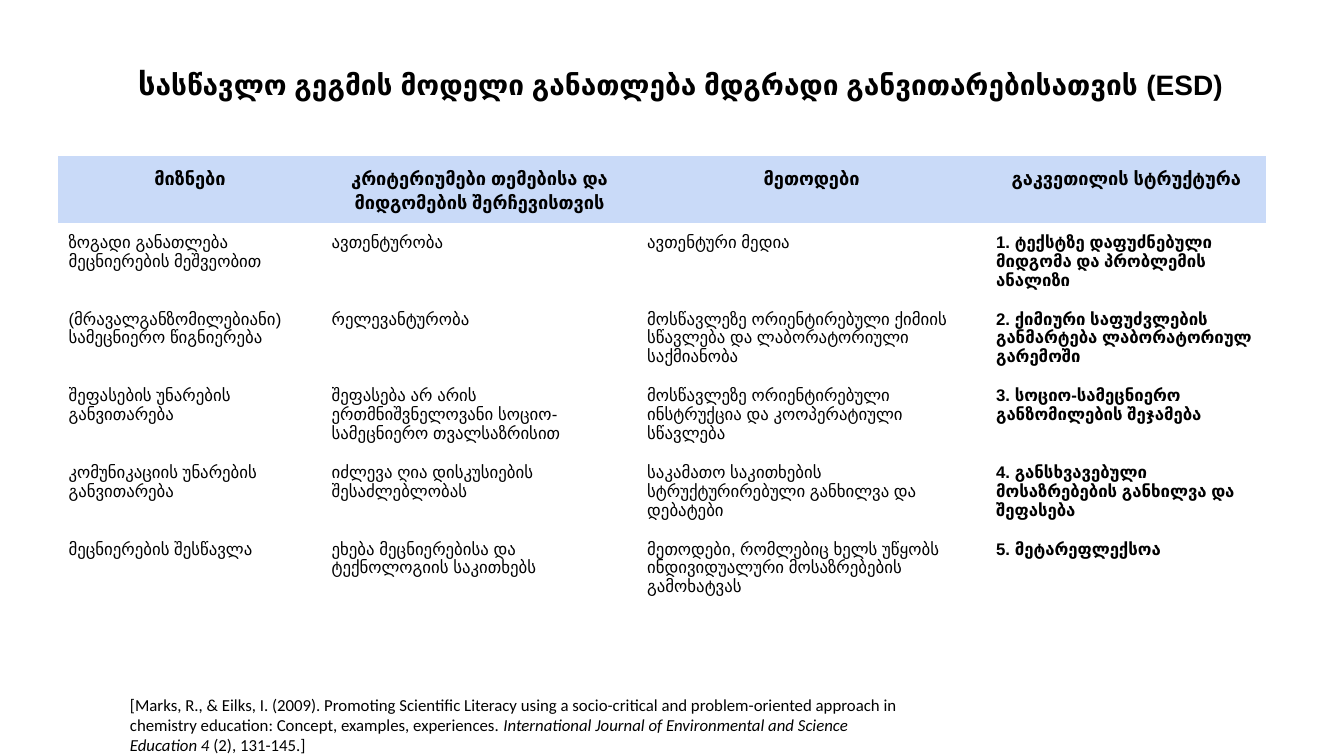
from dataclasses import dataclass
from typing import Any

import pptx
import pptx.dml.color
import pptx.enum.text
import pptx.util

SLIDE_WIDTH = pptx.util.Inches(13.33)
SLIDE_HEIGHT = pptx.util.Inches(7.5)
COLORS = {"text": "000000", "header": "C9DAF8"}
PLAIN_TABLE_STYLE = "{2D5ABB26-0587-4C30-8999-92F81FD0307C}"
LEFT = pptx.enum.text.PP_ALIGN.LEFT
CENTER = pptx.enum.text.PP_ALIGN.CENTER
TOP = pptx.enum.text.MSO_ANCHOR.TOP
MIDDLE = pptx.enum.text.MSO_ANCHOR.MIDDLE


def across(percent: float) -> int:
    return round(SLIDE_WIDTH * percent / 100)


def down(percent: float) -> int:
    return round(SLIDE_HEIGHT * percent / 100)


@dataclass(frozen=True)
class Area:
    left: float
    top: float
    width: float
    height: float

    def lengths(self) -> dict[str, int]:
        return {
            "left": across(self.left),
            "top": down(self.top),
            "width": across(self.width),
            "height": down(self.height),
        }


@dataclass(frozen=True)
class Run:
    text: str
    size: float
    font: str = "Arial"
    bold: bool = False
    italic: bool = False


@dataclass(frozen=True)
class Column:
    width: float
    heading: str
    entries: tuple[str, ...]
    bold: bool = False


TITLE_AREA = Area(9.53, 1.33, 86.27, 19.33)
CITATION_AREA = Area(8.93, 91.2, 59.94, 9.33)
TABLE_LEFT, TABLE_TOP = 4.35, 20.67
HEADER_HEIGHT, ROW_HEIGHT = 6.93, 10

TITLE = [
    Run("ს", 22, bold=True),
    Run("ასწავლო გეგმის მოდელი განათლება მდგრადი განვითარებისათვის (ESD)", 20, bold=True),
]
CITATION = [
    Run(
        "[Marks, R., & Eilks, I. (2009). Promoting Scientific Literacy using a socio-critical and "
        "problem-oriented approach in chemistry education: Concept, examples, experiences. ",
        12,
        "Calibri",
    ),
    Run("International Journal of Environmental and Science Education 4 ", 12, "Calibri", italic=True),
    Run("(2), 131-145.]", 12, "Calibri"),
]
COLUMNS = [
    Column(19.58, "მიზნები", (
        "ზოგადი განათლება მეცნიერების მეშვეობით",
        "(მრავალგანზომილებიანი) სამეცნიერო წიგნიერება",
        "შეფასების უნარების განვითარება",
        "კომუნიკაციის უნარების განვითარება",
        "მეცნიერების შესწავლა",
    )),
    Column(23.48, "კრიტერიუმები თემებისა და მიდგომების შერჩევისთვის", (
        "ავთენტურობა",
        "რელევანტურობა",
        "შეფასება არ არის ერთმნიშვნელოვანი სოციო-სამეცნიერო თვალსაზრისით",
        "იძლევა ღია დისკუსიების შესაძლებლობას",
        "ეხება მეცნიერებისა და ტექნოლოგიის საკითხებს",
    )),
    Column(25.96, "მეთოდები", (
        "ავთენტური მედია",
        "მოსწავლეზე ორიენტირებული ქიმიის სწავლება და ლაბორატორიული საქმიანობა",
        "მოსწავლეზე ორიენტირებული ინსტრუქცია და კოოპერატიული სწავლება",
        "საკამათო საკითხების სტრუქტურირებული განხილვა და დებატები",
        "მეთოდები, რომლებიც ხელს უწყობს ინდივიდუალური მოსაზრებების გამოხატვას",
    )),
    Column(20.86, "გაკვეთილის სტრუქტურა", (
        "1. ტექსტზე დაფუძნებული მიდგომა და პრობლემის ანალიზი",
        "2. ქიმიური საფუძვლების განმარტება ლაბორატორიულ გარემოში",
        "3. სოციო-სამეცნიერო განზომილების შეჯამება",
        "4. განსხვავებული მოსაზრებების განხილვა და შეფასება",
        "5. მეტარეფლექსოა",
    ), bold=True),
]


def apply_format(target: Any, values: dict[str, Any]) -> None:
    for name, value in values.items():
        setattr(target, name, value)


def margins(horizontal: float, vertical: float) -> dict[str, int]:
    side, edge = pptx.util.Inches(horizontal), pptx.util.Inches(vertical)
    return {"margin_left": side, "margin_right": side, "margin_top": edge, "margin_bottom": edge}


def write_runs(frame: Any, runs: list[Run], alignment: Any = LEFT, spacing: float = 1.0) -> None:
    paragraph = frame.paragraphs[0]
    apply_format(paragraph, {"alignment": alignment, "line_spacing": spacing})
    for item in runs:
        run = paragraph.add_run()
        run.text = item.text
        apply_format(run.font, {
            "name": item.font,
            "size": pptx.util.Pt(item.size),
            "bold": item.bold,
            "italic": item.italic,
        })
        run.font.color.rgb = pptx.dml.color.RGBColor.from_string(COLORS["text"])


def fill_text_shape(shape: Any, area: Area, runs: list[Run], anchor: Any) -> None:
    apply_format(shape, area.lengths())
    apply_format(shape.text_frame, {
        "word_wrap": True,
        "auto_size": pptx.enum.text.MSO_AUTO_SIZE.NONE,
        "vertical_anchor": anchor,
        **margins(0.1, 0.05),
    })
    write_runs(shape.text_frame, runs)


def add_plan_table(slide: Any) -> None:
    entry_count = len(COLUMNS[0].entries)
    area = Area(
        TABLE_LEFT,
        TABLE_TOP,
        sum(column.width for column in COLUMNS),
        HEADER_HEIGHT + entry_count * ROW_HEIGHT,
    )
    table = slide.shapes.add_table(entry_count + 1, len(COLUMNS), **area.lengths()).table
    apply_format(table, {"first_row": False, "horz_banding": False})
    table._tbl.tblPr[0].text = PLAIN_TABLE_STYLE
    for index, row in enumerate(table.rows):
        row.height = down(ROW_HEIGHT if index else HEADER_HEIGHT)
    for column_index, column in enumerate(COLUMNS):
        table.columns[column_index].width = across(column.width)
        for row_index, text in enumerate((column.heading, *column.entries)):
            cell = table.cell(row_index, column_index)
            apply_format(cell, {"vertical_anchor": TOP, **margins(0.1, 0.1)})
            if row_index == 0:
                cell.fill.solid()
                cell.fill.fore_color.rgb = pptx.dml.color.RGBColor.from_string(COLORS["header"])
                write_runs(cell.text_frame, [Run(text, 13, bold=True)], CENTER, 1.15)
            else:
                cell.fill.background()
                write_runs(cell.text_frame, [Run(text, 12, bold=column.bold)])


def main() -> None:
    presentation = pptx.Presentation()
    apply_format(presentation, {"slide_width": SLIDE_WIDTH, "slide_height": SLIDE_HEIGHT})
    slide = presentation.slides.add_slide(presentation.slide_layouts.get_by_name("Title Only"))
    fill_text_shape(slide.shapes.title, TITLE_AREA, TITLE, MIDDLE)
    add_plan_table(slide)
    citation = slide.shapes.add_textbox(**CITATION_AREA.lengths())
    fill_text_shape(citation, CITATION_AREA, CITATION, TOP)
    presentation.save("out.pptx")


if __name__ == "__main__":
    main()
